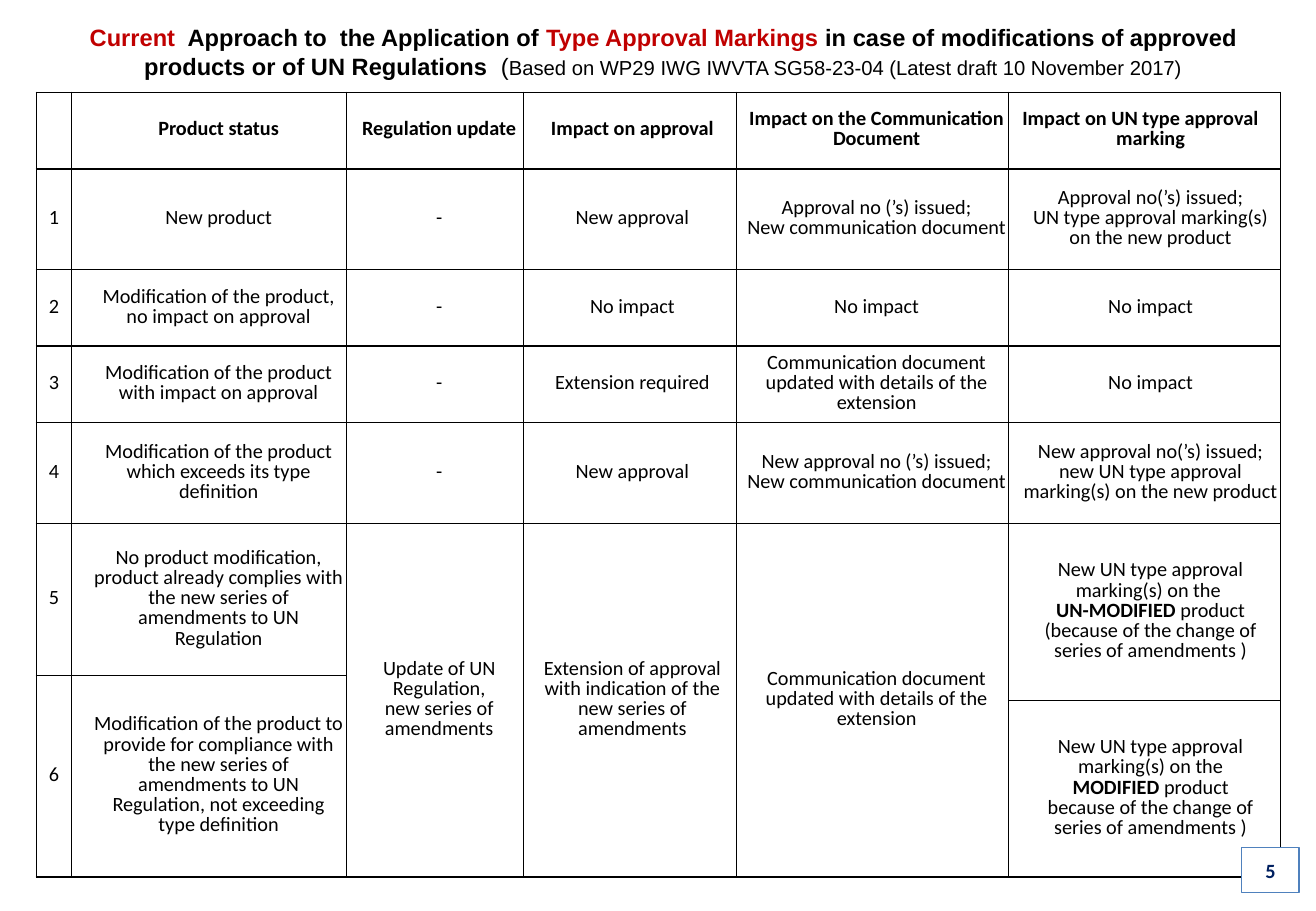
from lxml import etree
from pptx import Presentation
from pptx.dml.color import RGBColor
from pptx.enum.shapes import MSO_SHAPE
from pptx.enum.text import MSO_ANCHOR, MSO_AUTO_SIZE, PP_ALIGN
from pptx.oxml.ns import qn
from pptx.util import Inches, Pt

CENTER = PP_ALIGN.CENTER
MIDDLE = MSO_ANCHOR.MIDDLE
FIT_SHAPE = MSO_AUTO_SIZE.SHAPE_TO_FIT_TEXT
RECTANGLE = MSO_SHAPE.RECTANGLE

BLACK, WHITE, RED, NAVY, BLUE = "000000", "FFFFFF", "C00000", "002060", "4F81BD"

COLUMN_WIDTHS = [0.29, 2.26, 1.46, 1.75, 2.24, 2.24]
COLUMN_INDENTS = [0, 0.16, 0.07, 0.04, 0.07, 0.1]
ROW_HEIGHTS = [0.63, 0.83, 0.63, 0.63, 0.83, 1.25, 0.21, 1.45]
MERGES = [((5, 2), (7, 2)), ((5, 3), (7, 3)), ((5, 4), (7, 4)),
          ((5, 5), (6, 5)), ((6, 0), (7, 0)), ((6, 1), (7, 1))]

# Within a cell, \n starts a paragraph, \v breaks a line and * toggles bold.
ROWS = [
    ["", "*Product status", "*Regulation update", "*Impact on approval",
     "*Impact on the Communication Document", "*Impact on UN type approval　marking"],
    ["1", "New product", "-", "New approval",
     "Approval no (’s) issued;\nNew communication document",
     "Approval no(’s) issued;\vUN type approval marking(s) on the new product"],
    ["2", "Modification of the product, no impact on approval", "-", "No impact",
     "No impact", "No impact"],
    ["3", "Modification of the product with impact on approval", "-", "Extension required",
     "Communication document updated with details of the extension", "No impact"],
    ["4", "Modification of the product which exceeds its type definition", "-", "New approval",
     "New approval no (’s) issued;\nNew communication document",
     "New approval no(’s) issued; new UN type approval marking(s) on the new product"],
    ["5", "No product modification, product already complies with the new series of "
     "amendments to UN Regulation",
     "Update of UN Regulation,\nnew series of amendments",
     "Extension of approval with indication of the new series of amendments",
     "Communication document updated with details of the extension",
     "New UN type approval marking(s) on the \n*UN-MODIFIED* product "
     "(because of the change of series of amendments )"],
    ["6", "Modification of the product to provide for compliance with the new series of "
     "amendments to UN Regulation, not exceeding type definition", "", "", "", ""],
    ["", "", "", "", "",
     "New UN type approval marking(s) on the\n *MODIFIED* product \n"
     "because of the change of series of amendments )"],
]

TITLE_RUNS = [
    ("Current ", {"color": RED}),
    (" Approach to  the Application of ", {}),
    ("Type Approval Markings ", {"color": RED}),
    ("in case of modifications of approved products or of UN Regulations  ", {}),
    ("(", {"bold": False}),
    ("Based on WP29 IWG IWVTA SG58-23-04 (Latest draft 10 November 2017)",
     {"bold": False, "size": 12}),
]


def rgb(value):
    """Turn a hex string into a colour."""
    return RGBColor.from_string(value)


def add_text(paragraph, text, size=12, font="Calibri", color=BLACK, bold=False):
    """Add formatted text, with line breaks at vertical tabs."""
    for index, line in enumerate(text.split("\v")):
        if index:
            paragraph.add_line_break()
        run = paragraph.add_run()
        run.text = line
        run.font.size = Pt(size)
        run.font.name = font
        run.font.bold = bold
        run.font.color.rgb = rgb(color)


def set_borders(cell, **widths):
    """Draw black cell borders with widths in points by side."""
    properties = cell._tc.get_or_add_tcPr()
    for side in "LRTB":
        line = etree.SubElement(properties, qn(f"a:ln{side}"), w=str(Pt(widths.get(side, 1))))
        fill = etree.SubElement(line, qn("a:solidFill"))
        etree.SubElement(fill, qn("a:srgbClr"), val=BLACK)


def fill_cell(cell, content, indent):
    """Write the paragraphs of one table cell."""
    cell.vertical_anchor = MIDDLE
    cell.margin_left = cell.margin_top = cell.margin_right = Inches(0.01)
    cell.margin_bottom = 0
    frame = cell.text_frame
    for index, line in enumerate(content.split("\n")):
        paragraph = frame.add_paragraph() if index else frame.paragraphs[0]
        paragraph.alignment = CENTER
        paragraph.line_spacing = Pt(12)
        properties = paragraph._p.get_or_add_pPr()
        properties.set("marL", str(Inches(indent)))
        properties.set("indent", "0")
        for part, text in enumerate(line.split("*")):
            if text:
                add_text(paragraph, text, bold=part % 2 == 1)


def add_approval_table(slide, left, top, width, height):
    """Build the table of product statuses and their impacts."""
    table = slide.shapes.add_table(
        len(ROWS), len(COLUMN_WIDTHS),
        Inches(left), Inches(top), Inches(width), Inches(height)).table
    table.first_row = table.horz_banding = False
    for column, column_width in zip(table.columns, COLUMN_WIDTHS):
        column.width = Inches(column_width)
    for row, row_height in zip(table.rows, ROW_HEIGHTS):
        row.height = Inches(row_height)
    for r, contents in enumerate(ROWS):
        for c, content in enumerate(contents):
            cell = table.cell(r, c)
            set_borders(cell, T=1.5 if r == 1 else 1, B=1.5 if r == 0 else 1)
            cell.fill.solid()
            cell.fill.fore_color.rgb = rgb(WHITE)
            fill_cell(cell, content, COLUMN_INDENTS[c])
    for first, last in MERGES:
        table.cell(*first).merge(table.cell(*last))


def add_title(slide, left, top, width, height):
    """Place the two-line heading."""
    heading = slide.shapes.add_textbox(Inches(left), Inches(top), Inches(width), Inches(height))
    frame = heading.text_frame
    frame.word_wrap = True
    frame.auto_size = FIT_SHAPE
    frame.vertical_anchor = MIDDLE
    paragraph = frame.paragraphs[0]
    paragraph.alignment = CENTER
    for text, style in TITLE_RUNS:
        add_text(paragraph, text, **{"size": 14, "font": "Arial", "bold": True, **style})


def add_page_number(slide, left, top, width, height):
    """Place the framed page number."""
    badge = slide.shapes.add_shape(
        RECTANGLE, Inches(left), Inches(top), Inches(width), Inches(height))
    badge.shadow.inherit = False
    badge.fill.solid()
    badge.fill.fore_color.rgb = rgb(WHITE)
    badge.line.color.rgb = rgb(BLUE)
    badge.line.width = Pt(0.75)
    badge.text_frame.vertical_anchor = MIDDLE
    paragraph = badge.text_frame.paragraphs[0]
    paragraph.alignment = CENTER
    add_text(paragraph, "5", color=NAVY, bold=True)


def main():
    """Build and save the slide."""
    presentation = Presentation()
    presentation.slide_width = Inches(10.83)
    presentation.slide_height = Inches(7.5)
    slide = presentation.slides.add_slide(presentation.slide_layouts[6])
    add_approval_table(slide, 0.3, 0.76, sum(COLUMN_WIDTHS), sum(ROW_HEIGHTS))
    add_title(slide, 0.3, 0.14, 10.32, 0.57)
    add_page_number(slide, 10.22, 6.98, 0.47, 0.37)
    presentation.save("out.pptx")


if __name__ == "__main__":
    main()
